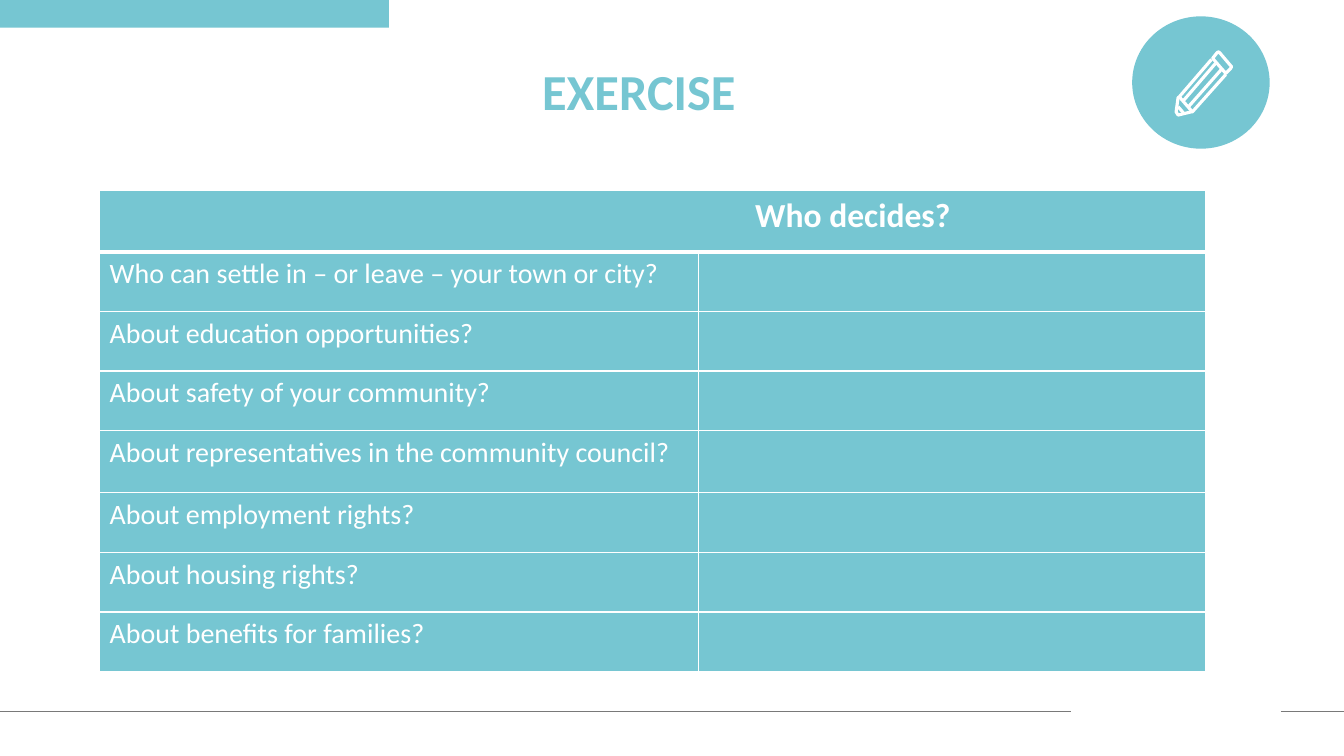
from lxml import etree
from pptx import Presentation
from pptx.dml.color import RGBColor
from pptx.enum.shapes import MSO_CONNECTOR, MSO_SHAPE
from pptx.enum.text import MSO_ANCHOR, MSO_AUTO_SIZE, PP_ALIGN
from pptx.oxml import parse_xml
from pptx.oxml.ns import nsdecls, qn
from pptx.util import Cm, Pt

RECT, CIRCLE = MSO_SHAPE.RECTANGLE, MSO_SHAPE.FLOWCHART_CONNECTOR
STRAIGHT = MSO_CONNECTOR.STRAIGHT
LEFT, CENTER = PP_ALIGN.LEFT, PP_ALIGN.CENTER
TEAL, WHITE, GREY = "76C6D2", "FFFFFF", "797979"

TITLE = {"name": "Calibri", "size": Pt(36), "bold": True}
HEADER = {"name": "Calibri", "size": Pt(24), "bold": True}
BODY = {"name": "Calibri", "size": Pt(20), "bold": False}

QUESTIONS = [
    "Who can settle in – or leave – your town or city?",
    "About education opportunities?",
    "About safety of your community?",
    "About representatives in the community council?",
    "About employment rights?",
    "About housing rights?",
    "About benefits for families?",
]
COLUMN_WIDTHS = [15.09, 12.78]
ROW_HEIGHTS = [1.55, 1.5, 1.5, 1.5, 1.57, 1.5, 1.5, 1.5]

PENCIL_CAP = [(31.01, 1.65), (30.73, 1.32), (30.7, 1.31), (30.68, 1.32),
              (30.56, 1.47), (30.89, 1.85), (31.01, 1.73), (31.04, 1.68)]
PENCIL_BODY = [(30.53, 1.5), (29.72, 2.44), (29.69, 2.46), (29.64, 2.82),
               (29.67, 2.87), (29.69, 2.9), (30.02, 2.82), (30.05, 2.82),
               (30.89, 1.88)]
PENCIL_STROKES = [
    (30.78, 1.75, 29.95, 2.69),
    (29.82, 2.54, 30.63, 1.6),
    (29.82, 2.84, 29.69, 2.69),
    (29.72, 2.44, 30.05, 2.82),
]


def rgb(color):
    """Turn a hex string into a colour."""
    return RGBColor.from_string(color)


def set_line(line, color, width):
    """Give a line its colour and its width in points."""
    line.color.rgb = rgb(color)
    line.width = Pt(width)


def write(tf, text, style, color, align=LEFT):
    """Write one formatted paragraph into a text frame."""
    p = tf.paragraphs[0]
    p.alignment = align
    r = p.add_run()
    r.text = text
    for name, value in style.items():
        setattr(r.font, name, value)
    r.font.color.rgb = rgb(color)
    return p


def add_block(s, kind, left, top, width, height):
    """Add a teal preset shape."""
    sp = s.shapes.add_shape(kind, Cm(left), Cm(top), Cm(width), Cm(height))
    sp.shadow.inherit = False
    sp.fill.solid()
    sp.fill.fore_color.rgb = rgb(TEAL)
    sp.line.fill.background()
    return sp


def add_line(s, x1, y1, x2, y2, color, width):
    """Add a straight line without a shadow."""
    line = s.shapes.add_connector(STRAIGHT, Cm(x1), Cm(y1), Cm(x2), Cm(y2))
    set_line(line.line, color, width)
    etree.SubElement(line.element.spPr, qn("a:effectLst"))


def add_outline(s, points, close):
    """Add an unfilled white outline through the points."""
    start, *rest = [(Cm(x), Cm(y)) for x, y in points]
    builder = s.shapes.build_freeform(*start)
    builder.add_line_segments(rest, close=close)
    sp = builder.convert_to_shape()
    sp.shadow.inherit = False
    sp.fill.background()
    set_line(sp.line, WHITE, 2.25)


def add_pencil(s):
    """Add the round badge with a pencil."""
    badge = add_block(s, CIRCLE, 28.55, 0.43, 3.43, 3.3)
    set_line(badge.line, TEAL, 1)
    add_outline(s, PENCIL_CAP, True)
    add_outline(s, PENCIL_BODY, False)
    for stroke in PENCIL_STROKES:
        add_line(s, *stroke, WHITE, 2.25)


def add_title(s, text):
    """Place and format the title."""
    sp = s.shapes.title
    sp.left, sp.top, sp.width, sp.height = Cm(13.41), Cm(1.5), Cm(5.92), Cm(1.75)
    tf = sp.text_frame
    tf.auto_size = MSO_AUTO_SIZE.NONE
    tf.word_wrap = True
    tf.vertical_anchor = MSO_ANCHOR.MIDDLE
    write(tf, text, TITLE, TEAL).line_spacing = 0.9


def format_cell(cell, bottom):
    """Fill a cell and draw its white borders."""
    tc_pr = cell._tc.get_or_add_tcPr()
    for side, width in {"L": 1, "R": 1, "T": 1, "B": bottom}.items():
        tc_pr.append(parse_xml(
            f'<a:ln{side} {nsdecls("a")} w="{Pt(width)}"><a:solidFill>'
            f'<a:srgbClr val="{WHITE}"/></a:solidFill></a:ln{side}>'))
    cell.fill.solid()
    cell.fill.fore_color.rgb = rgb(TEAL)


def add_questions(s):
    """Add the table of questions with an empty answer column."""
    table = s.shapes.add_table(
        len(ROW_HEIGHTS), len(COLUMN_WIDTHS), Cm(2.51), Cm(4.8),
        Cm(sum(COLUMN_WIDTHS)), Cm(sum(ROW_HEIGHTS))).table
    for column, width in zip(table.columns, COLUMN_WIDTHS):
        column.width = Cm(width)
    for i, (row, height) in enumerate(zip(table.rows, ROW_HEIGHTS)):
        row.height = Cm(height)
        for cell in row.cells:
            format_cell(cell, 1 if i else 3)
    header = table.cell(0, 0)
    header.merge(table.cell(0, 1))
    header.margin_left = Cm(10.35)
    write(header.text_frame, "Who decides?", HEADER, WHITE, CENTER)
    for i, question in enumerate(QUESTIONS, 1):
        write(table.cell(i, 0).text_frame, question, BODY, WHITE)


def main():
    """Build the exercise slide."""
    prs = Presentation()
    prs.slide_width, prs.slide_height = Cm(33.87), Cm(19.05)
    s = prs.slides.add_slide(prs.slide_layouts[5])
    add_block(s, RECT, 0, 0, 9.8, 0.7)
    add_line(s, 0, 17.93, 27, 17.93, GREY, 0.5)
    add_line(s, 32.28, 17.93, 33.87, 17.93, GREY, 0.5)
    add_title(s, "EXERCISE")
    add_pencil(s)
    add_questions(s)
    prs.save("out.pptx")


if __name__ == "__main__":
    main()
